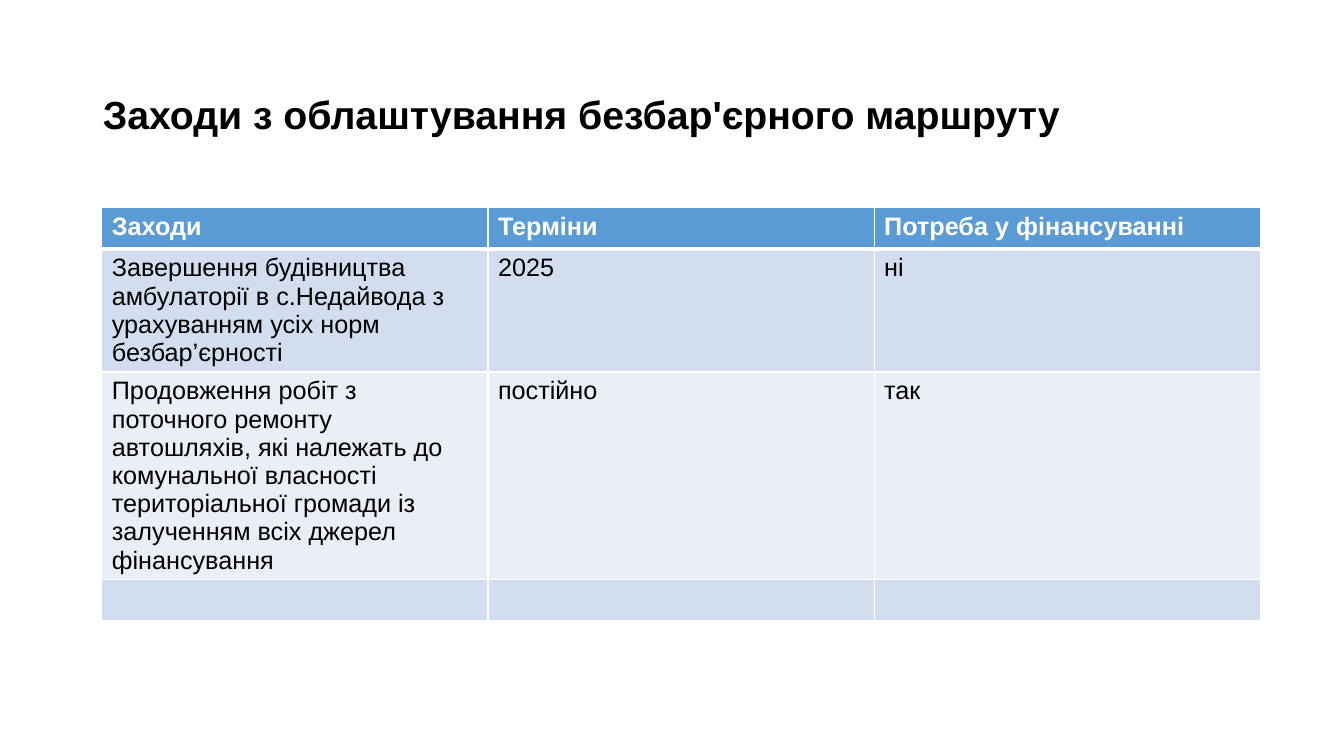
"""Builds a slide with a table of measures for a barrier-free route."""
import pptx
import pptx.dml.color
import pptx.enum.text
import pptx.oxml
import pptx.oxml.ns
import pptx.util

TITLE = "Заходи з облаштування безбар'єрного маршруту"
MEASURES = [
    ("Заходи", "Терміни", "Потреба у фінансуванні"),
    ("Завершення будівництва амбулаторії в с.Недайвода з урахуванням усіх норм безбар’єрності",
     "2025", "ні"),
    ("Продовження робіт з поточного ремонту автошляхів, які належать до комунальної власності "
     "територіальної громади із залученням всіх джерел фінансування", "постійно", "так"),
    ("", "", ""),
]

RGBColor = pptx.dml.color.RGBColor
WHITE = RGBColor(0xFF, 0xFF, 0xFF)
BLACK = RGBColor(0x00, 0x00, 0x00)
HEADER_BLUE = RGBColor(0x5B, 0x9B, 0xD5)
BANDS = [RGBColor(0xEA, 0xEF, 0xF7), RGBColor(0xD2, 0xDE, 0xEF)]
FONT = "Arial"
Inches = pptx.util.Inches
COLUMN_WIDTH, ROW_HEIGHT = 3.83, 0.41


def format_text(paragraph, size, color, bold):
    for run in paragraph.runs:
        run.font.name = FONT
        run.font.size = pptx.util.Pt(size)
        run.font.bold = bold
        run.font.color.rgb = color


def add_borders(cell, widths):
    properties = cell._tc.get_or_add_tcPr()
    for side, width in widths.items():
        properties.append(pptx.oxml.parse_xml(
            f'<a:ln{side} {pptx.oxml.ns.nsdecls("a")} w="{pptx.util.Pt(width)}">'
            f'<a:solidFill><a:srgbClr val="{WHITE}"/></a:solidFill></a:ln{side}>'))


def add_title(slide):
    title = slide.shapes.title
    title.left, title.top, title.width, title.height = map(Inches, (0.92, 0.43, 11.5, 1.45))
    title.text_frame.text = TITLE
    title.text_frame.vertical_anchor = pptx.enum.text.MSO_ANCHOR.MIDDLE
    heading = title.text_frame.paragraphs[0]
    heading.alignment = pptx.enum.text.PP_ALIGN.LEFT
    heading.line_spacing = 0.9
    format_text(heading, 28, BLACK, True)


def add_measures(slide):
    rows, columns = len(MEASURES), len(MEASURES[0])
    table = slide.shapes.add_table(
        rows, columns, Inches(1.01), Inches(2.06),
        Inches(columns * COLUMN_WIDTH), Inches(rows * ROW_HEIGHT)).table
    for row, measure in enumerate(MEASURES):
        header = row == 0
        for column, wording in enumerate(measure):
            cell = table.cell(row, column)
            cell.text_frame.text = wording
            format_text(cell.text_frame.paragraphs[0], 18, WHITE if header else BLACK, header)
            add_borders(cell, {"L": 1, "R": 1, "T": 3 if row == 1 else 1, "B": 3 if header else 1})
            cell.fill.solid()
            cell.fill.fore_color.rgb = HEADER_BLUE if header else BANDS[row % 2]


def main():
    presentation = pptx.Presentation()
    presentation.slide_width, presentation.slide_height = Inches(13.33), Inches(7.5)
    slide = presentation.slides.add_slide(presentation.slide_layouts.get_by_name("Title Only"))
    add_title(slide)
    add_measures(slide)
    presentation.save("out.pptx")


if __name__ == "__main__":
    main()
